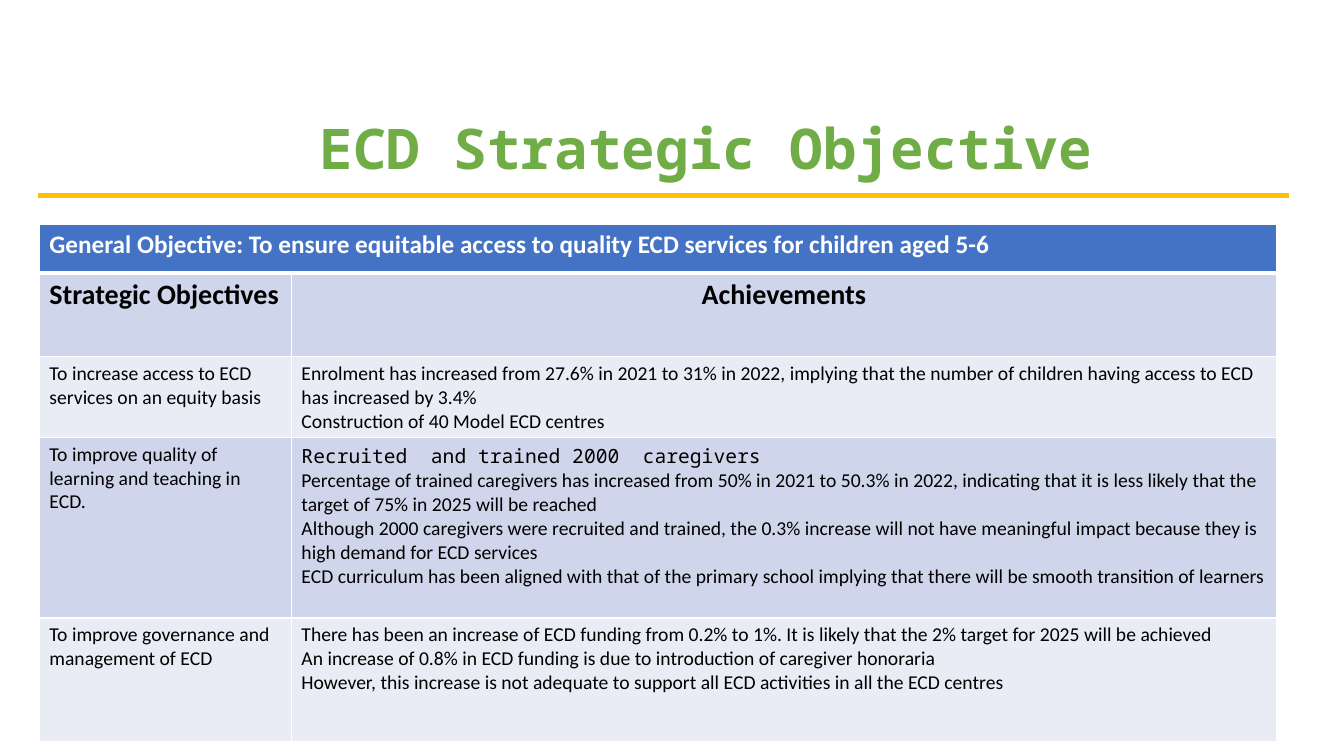
from dataclasses import dataclass

import pptx
import pptx.dml.color
import pptx.enum.shapes
import pptx.enum.text
import pptx.oxml.ns
import pptx.util
from lxml import etree

Inches = pptx.util.Inches
Pt = pptx.util.Pt
Align = pptx.enum.text.PP_ALIGN


@dataclass(frozen=True)
class Theme:
    green: str = "70AD47"
    gold: str = "FFC000"
    blue: str = "4472C4"
    band_dark: str = "CFD5EA"
    band_light: str = "E9EBF5"
    white: str = "FFFFFF"
    black: str = "000000"
    body_font: str = "Calibri"
    mono_font: str = "Noto Sans Mono"
    title_size: int = 40
    column_size: int = 20
    header_size: int = 18
    body_size: int = 14
    thin: int = 1
    thick: int = 3


THEME = Theme()


@dataclass(frozen=True)
class TextStyle:
    size: int
    color: str = THEME.black
    bold: bool = False
    font: str = THEME.body_font
    align: Align = Align.LEFT


TITLE = TextStyle(THEME.title_size, THEME.green, True, THEME.mono_font, Align.CENTER)
HEADER = TextStyle(THEME.header_size, THEME.white, True)
COLUMN = TextStyle(THEME.column_size, bold=True)
COLUMN_CENTERED = TextStyle(THEME.column_size, bold=True, align=Align.CENTER)
BODY = TextStyle(THEME.body_size)
MONO = TextStyle(THEME.body_size, font=THEME.mono_font)


@dataclass(frozen=True)
class Line:
    text: str
    style: TextStyle = BODY


@dataclass(frozen=True)
class TableRow:
    height: float
    fill: str
    cells: tuple[tuple[Line, ...], ...]


COLUMN_WIDTHS = (2.5, 9.77)
ROWS = (
    TableRow(0.48, THEME.blue, (
        (Line("General Objective: To ensure equitable access to quality ECD "
              "services for children aged 5-6", HEADER),),
    )),
    TableRow(0.83, THEME.band_dark, (
        (Line("Strategic Objectives", COLUMN),),
        (Line("Achievements", COLUMN_CENTERED),),
    )),
    TableRow(0.8, THEME.band_light, (
        (Line("To increase access to ECD services on an equity basis"),),
        (Line("Enrolment has increased from 27.6% in 2021 to 31% in 2022, implying that "
              "the number of children having access to ECD has increased by 3.4%"),
         Line("Construction of 40 Model ECD centres")),
    )),
    TableRow(1.79, THEME.band_dark, (
        (Line("To improve quality of learning and teaching in ECD."),),
        (Line("Recruited  and trained 2000  caregivers", MONO),
         Line("Percentage of trained caregivers has increased from 50% in 2021 to 50.3% in "
              "2022, indicating that it is less likely that the target of 75% in 2025 will "
              "be reached"),
         Line("Although 2000 caregivers were recruited and trained, the 0.3% increase will "
              "not have meaningful impact because they is high demand for ECD services"),
         Line("ECD curriculum has been aligned with that of the primary school implying "
              "that there will be smooth transition of learners")),
    )),
    TableRow(1.23, THEME.band_light, (
        (Line("To improve governance and management of ECD"),),
        (Line("There has been an increase of ECD funding from 0.2% to 1%. It is likely that "
              "the 2% target for 2025 will be achieved"),
         Line("An increase of 0.8% in ECD funding is due to introduction of caregiver "
              "honoraria"),
         Line("However, this increase is not adequate to support all ECD activities in all "
              "the ECD centres")),
    )),
)


def rgb(color: str) -> pptx.dml.color.RGBColor:
    return pptx.dml.color.RGBColor.from_string(color)


def write_lines(frame: pptx.text.text.TextFrame, lines: tuple[Line, ...]) -> None:
    frame.word_wrap = True
    frame.text = "\n".join(line.text for line in lines)
    for para, line in zip(frame.paragraphs, lines):
        para.alignment = line.style.align
        for span in para.runs:
            span.font.name = line.style.font
            span.font.size = Pt(line.style.size)
            span.font.bold = line.style.bold
            span.font.color.rgb = rgb(line.style.color)


def set_borders(cell: pptx.table._Cell, top: int, bottom: int) -> None:
    properties = cell._tc.get_or_add_tcPr()
    widths = {"a:lnL": THEME.thin, "a:lnR": THEME.thin, "a:lnT": top, "a:lnB": bottom}
    qn = pptx.oxml.ns.qn
    for tag, width in widths.items():
        border = etree.SubElement(properties, qn(tag), w=str(Pt(width)))
        fill = etree.SubElement(border, qn("a:solidFill"))
        etree.SubElement(fill, qn("a:srgbClr"), val=THEME.white)


def add_title(page: pptx.slide.Slide) -> None:
    box = page.shapes.add_textbox(Inches(1.48), Inches(0.54), Inches(11.37), Inches(1.31))
    frame = box.text_frame
    write_lines(frame, (Line("ECD Strategic Objective ", TITLE),))
    frame.vertical_anchor = pptx.enum.text.MSO_ANCHOR.BOTTOM
    frame.paragraphs[0].line_spacing = 0.9


def add_rule(page: pptx.slide.Slide) -> None:
    rule = page.shapes.add_connector(
        pptx.enum.shapes.MSO_CONNECTOR.STRAIGHT,
        Inches(0.38), Inches(1.94), Inches(12.78), Inches(1.94))
    rule.line.color.rgb = rgb(THEME.gold)
    rule.line.width = Pt(THEME.thick)
    etree.SubElement(rule._element.spPr, pptx.oxml.ns.qn("a:effectLst"))


def add_objectives_table(page: pptx.slide.Slide) -> None:
    table = page.shapes.add_table(
        len(ROWS), len(COLUMN_WIDTHS), Inches(0.39), Inches(2.23),
        Inches(sum(COLUMN_WIDTHS)), Inches(sum(row.height for row in ROWS))).table
    table.first_row = False
    table.horz_banding = False
    for column, width in zip(table.columns, COLUMN_WIDTHS):
        column.width = Inches(width)
    table.cell(0, 0).merge(table.cell(0, 1))

    for index, row in enumerate(ROWS):
        table.rows[index].height = Inches(row.height)
        # The thick edge lies between the header and the column titles
        top = THEME.thick if index == 1 else THEME.thin
        bottom = THEME.thick if index == 0 else THEME.thin
        for cell in table.rows[index].cells:
            set_borders(cell, top, bottom)
            cell.fill.solid()
            cell.fill.fore_color.rgb = rgb(row.fill)
        for cell, lines in zip(table.rows[index].cells, row.cells):
            write_lines(cell.text_frame, lines)


def main() -> None:
    deck = pptx.Presentation()
    deck.slide_width = Inches(13.33)
    deck.slide_height = Inches(7.5)
    page = deck.slides.add_slide(deck.slide_layouts[6])

    # Heading
    add_rule(page)
    add_title(page)

    # Objectives and achievements
    add_objectives_table(page)

    deck.save("out.pptx")


if __name__ == "__main__":
    main()
